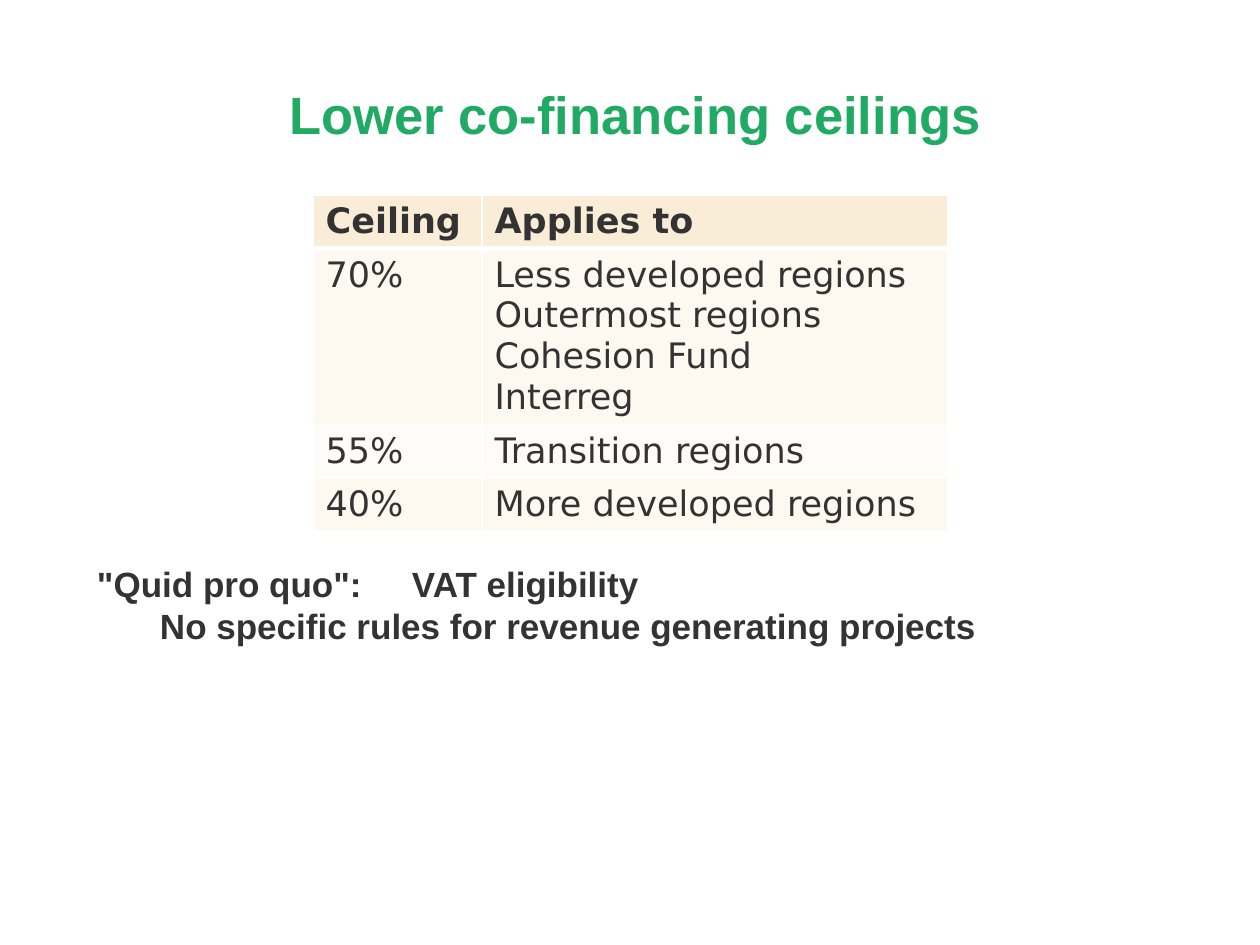
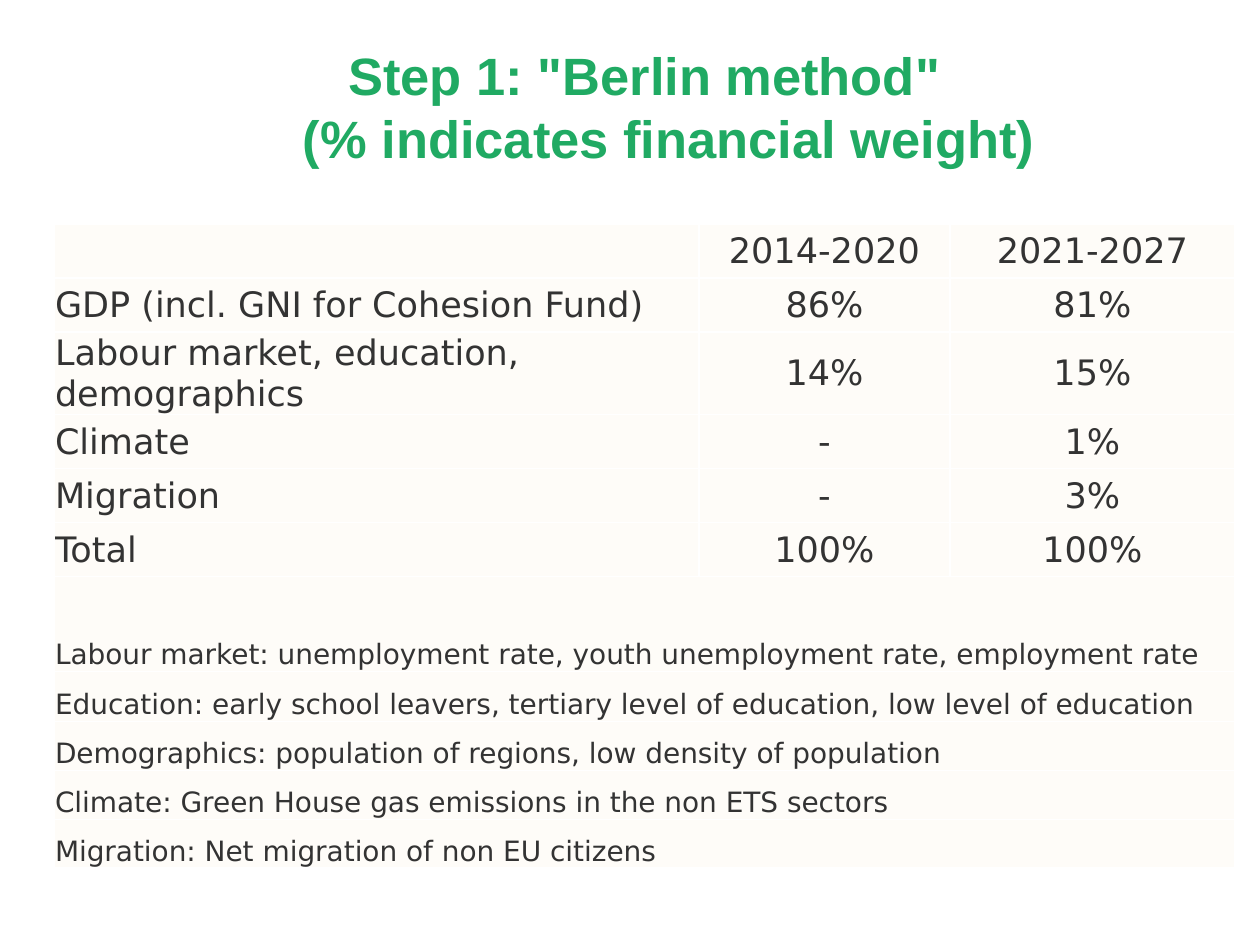
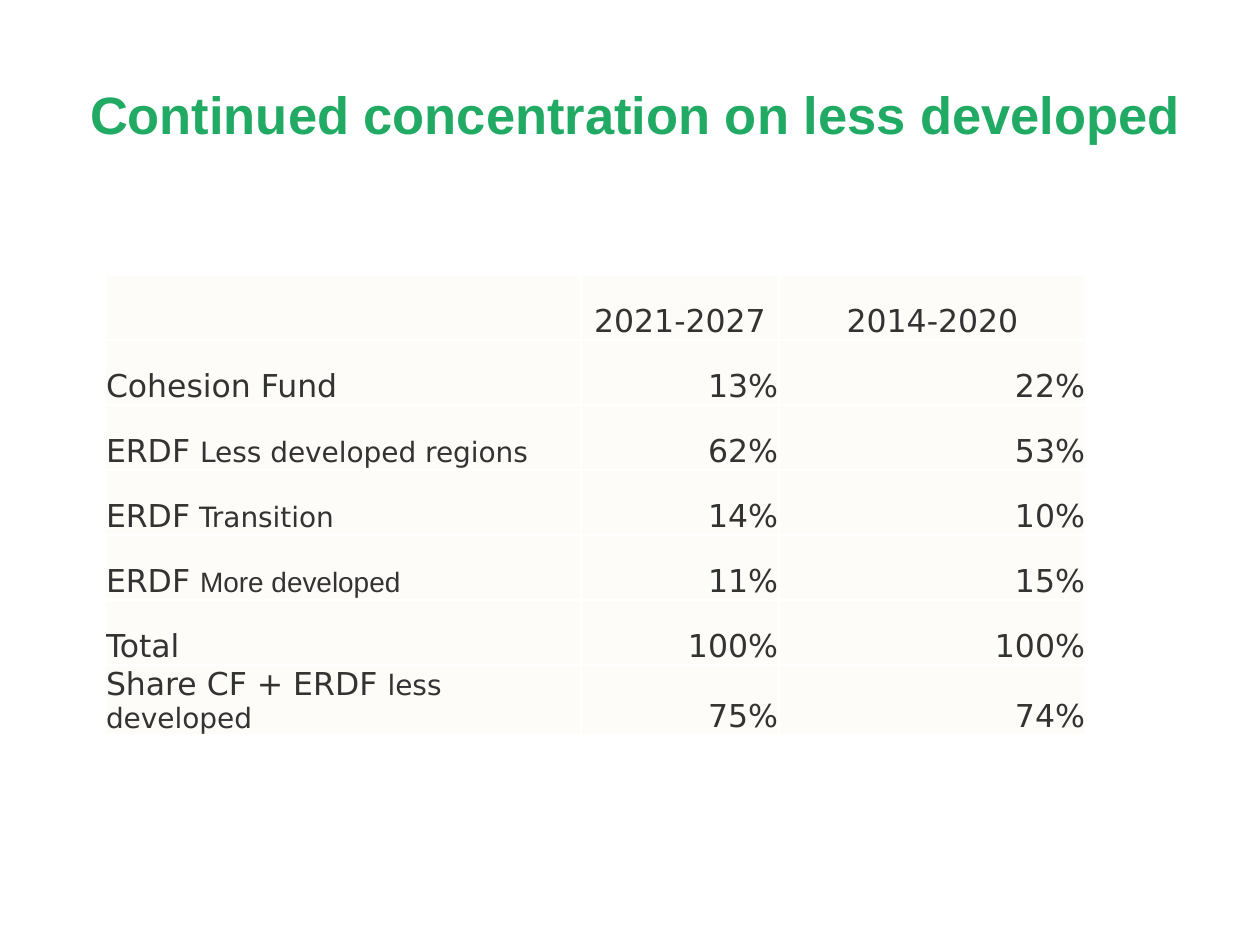
from lxml import etree
from pptx import Presentation
from pptx.dml.color import RGBColor
from pptx.enum.text import MSO_ANCHOR, MSO_AUTO_SIZE, PP_ALIGN
from pptx.oxml.ns import qn
from pptx.util import Pt

TOP, MIDDLE, BOTTOM = MSO_ANCHOR.TOP, MSO_ANCHOR.MIDDLE, MSO_ANCHOR.BOTTOM
LEFT, CENTER, RIGHT = PP_ALIGN.LEFT, PP_ALIGN.CENTER, PP_ALIGN.RIGHT
NO_AUTOFIT = MSO_AUTO_SIZE.NONE

EMU_PER_PX = 914400 / 126
SLIDE_SIZE = (1260, 945)
TITLE_LAYOUT = 5
TITLE_INDENT = 49
TIGHT_MARGINS = (1, 1, 1, 0)
COLORS = {
    "title": "20AA63",
    "text": "333333",
    "border": "FFFFFF",
    "header": "FAEDD7",
    "band": "FDF8F0",
    "pale": "FEFCF8",
}
HEADING_FONT, TABLE_FONT = "Arial", "DejaVu Sans"
SMALL = {"size": 16}
SMALL_ARIAL = {"size": 16, "font": HEADING_FONT}

CEILINGS = {
    "title": ["Lower co-financing ceilings"],
    "title_box": (74, 76, 1123, 99),
    "origin": (313, 195),
    "columns": [169, 466],
    "heights": [53, 176, 53, 53],
    "fills": ["header", "band", "pale", "band"],
    "size": 20,
    "anchor": TOP,
    "margins": None,
    "alignments": [LEFT, LEFT],
    "heading_row": True,
    "rows": [
        ["Ceiling", "Applies to"],
        ["70%", "Less developed regions\nOutermost regions\nCohesion Fund\nInterreg"],
        ["55%", "Transition regions"],
        ["40%", "More developed regions"],
    ],
}
QUID_PRO_QUO = (
    "\"Quid pro quo\":\tVAT eligibility\n"
    "\tNo specific rules for revenue generating projects"
)
QUID_PRO_QUO_BOX = (97, 563, 1053, 126)
QUID_PRO_QUO_TABS = [252, 378]

BERLIN_METHOD = {
    "title": ["Step 1: \"Berlin method\"", "(% indicates financial weight)"],
    "title_box": (83, 37, 1123, 159),
    "origin": (54, 224),
    "columns": [645, 251, 285],
    "heights": [54, 54, 82, 54, 54, 54, 95, 50, 49, 49, 49],
    "size": 20,
    "anchor": MIDDLE,
    "margins": TIGHT_MARGINS,
    "alignments": [LEFT, CENTER, CENTER],
    "rows": [
        ["", "2014-2020", "2021-2027"],
        ["GDP (incl. GNI for Cohesion Fund)", "86%", "81%"],
        ["Labour market, education, demographics", "14%", "15%"],
        ["Climate", "-", "1%"],
        ["Migration", "-", "3%"],
        ["Total", "100%", "100%"],
        ["Labour market: unemployment rate, youth unemployment rate, employment rate"],
        ["Education: early school leavers, tertiary level of education, low level of education"],
        ["Demographics: population of regions, low density of population"],
        ["Climate: Green House gas emissions in the non ETS sectors"],
        ["Migration: Net migration of non EU citizens"],
    ],
}

CONCENTRATION = {
    "title": ["Continued concentration on less developed"],
    "title_box": (74, 76, 1123, 99),
    "origin": (105, 275),
    "columns": [476, 198, 307],
    "heights": [65] * 6 + [70],
    "size": 18,
    "anchor": BOTTOM,
    "margins": TIGHT_MARGINS,
    "alignments": [LEFT, RIGHT, RIGHT],
    "rows": [
        ["", "2021-2027", "2014-2020"],
        ["Cohesion Fund", "13%", "22%"],
        [["ERDF ", ("Less developed regions", SMALL)], "62%", "53%"],
        [["ERDF", (" Transition", SMALL)], "14%", "10%"],
        [["ERDF ", ("More developed", SMALL_ARIAL)], "11%", "15%"],
        ["Total", "100%", "100%"],
        [["Share CF + ERDF ", ("less developed", SMALL)], "75%", "74%"],
    ],
}


def px(length):
    return round(length * EMU_PER_PX)


def rgb(name):
    return RGBColor.from_string(COLORS[name])


def format_font(font, size, name, color, bold):
    font.size, font.name, font.bold = Pt(size), name, bold
    font.color.rgb = rgb(color)


def write(frame, text, size, font=TABLE_FONT, color="text", bold=False,
          align=LEFT, leading=None, hanging=0, tabs=()):
    lines = text.split("\n") if isinstance(text, str) else [text]
    for number, line in enumerate(lines):
        para = frame.add_paragraph() if number else frame.paragraphs[0]
        para.alignment = align
        para.space_before = para.space_after = Pt(0)
        if leading:
            para.line_spacing = Pt(leading)
        properties = para._p.get_or_add_pPr()
        properties.set("marL", str(px(hanging)))
        properties.set("indent", str(-px(hanging)))
        if tabs:
            tab_list = etree.SubElement(properties, qn("a:tabLst"))
            for stop in tabs:
                etree.SubElement(tab_list, qn("a:tab"), pos=str(px(stop)), algn="l")
        for part in [line] if isinstance(line, str) else line:
            if part == "\v":
                para.add_line_break()
                continue
            words, changes = (part, {}) if isinstance(part, str) else part
            span = para.add_run()
            span.text = words
            format_font(span.font, changes.get("size", size),
                        changes.get("font", font), color, bold)


def set_margins(holder, margins):
    (holder.margin_left, holder.margin_top,
     holder.margin_right, holder.margin_bottom) = map(px, margins)


def add_borders(cell, top, bottom):
    properties = cell._tc.get_or_add_tcPr()
    widths = {"a:lnL": 1, "a:lnR": 1, "a:lnT": top, "a:lnB": bottom}
    for position, (side, width) in enumerate(widths.items()):
        line = etree.Element(qn(side), w=str(Pt(width)))
        fill = etree.SubElement(line, qn("a:solidFill"))
        etree.SubElement(fill, qn("a:srgbClr"), val=COLORS["border"])
        properties.insert(position, line)


def add_title(page, content):
    title = page.shapes.title
    title.left, title.top, title.width, title.height = map(px, content["title_box"])
    frame = title.text_frame
    frame.word_wrap, frame.auto_size, frame.vertical_anchor = True, NO_AUTOFIT, TOP
    set_margins(frame, (13, 6, 13, 6))
    parts = [part for line in content["title"] for part in ("\v", line)][1:]
    write(frame, parts, size=30, font=HEADING_FONT, color="title", bold=True,
          align=CENTER, leading=36, hanging=TITLE_INDENT)


def add_grid(page, content):
    rows, columns, heights = content["rows"], content["columns"], content["heights"]
    area = (*content["origin"], sum(columns), sum(heights))
    table = page.shapes.add_table(len(rows), len(columns), *map(px, area)).table
    has_heading = content.get("heading_row", False)
    table.first_row, table.horz_banding = has_heading, False
    fills = content.get("fills", ["pale"] * len(rows))
    for column, width in zip(table.columns, columns):
        column.width = px(width)
    for r, (row, values) in enumerate(zip(table.rows, rows)):
        row.height = px(heights[r])
        is_note = len(values) == 1
        if is_note:
            table.cell(r, 0).merge(table.cell(r, len(columns) - 1))
        for c, cell in enumerate(row.cells):
            add_borders(cell, top=3 if has_heading and r == 1 else 1,
                        bottom=3 if has_heading and r == 0 else 1)
            cell.fill.solid()
            cell.fill.fore_color.rgb = rgb(fills[r])
            if c >= len(values) or not values[c]:
                continue
            cell.vertical_anchor = BOTTOM if is_note else content["anchor"]
            if content["margins"]:
                set_margins(cell, content["margins"])
            write(cell.text_frame, values[c],
                  size=16 if is_note else content["size"],
                  bold=has_heading and r == 0,
                  align=CENTER if r == 0 and not has_heading else content["alignments"][c])


def add_quid_pro_quo(page):
    box = page.shapes.add_textbox(*map(px, QUID_PRO_QUO_BOX))
    frame = box.text_frame
    frame.word_wrap = True
    set_margins(frame, (0, 0, 0, 0))
    write(frame, QUID_PRO_QUO, size=20, font=HEADING_FONT, bold=True,
          leading=24, tabs=QUID_PRO_QUO_TABS)


def main():
    deck = Presentation()
    deck.slide_width, deck.slide_height = map(px, SLIDE_SIZE)
    for content in (CEILINGS, BERLIN_METHOD, CONCENTRATION):
        page = deck.slides.add_slide(deck.slide_layouts[TITLE_LAYOUT])
        add_title(page, content)
        add_grid(page, content)
        if content is CEILINGS:
            add_quid_pro_quo(page)
    deck.save("out.pptx")


if __name__ == "__main__":
    main()
